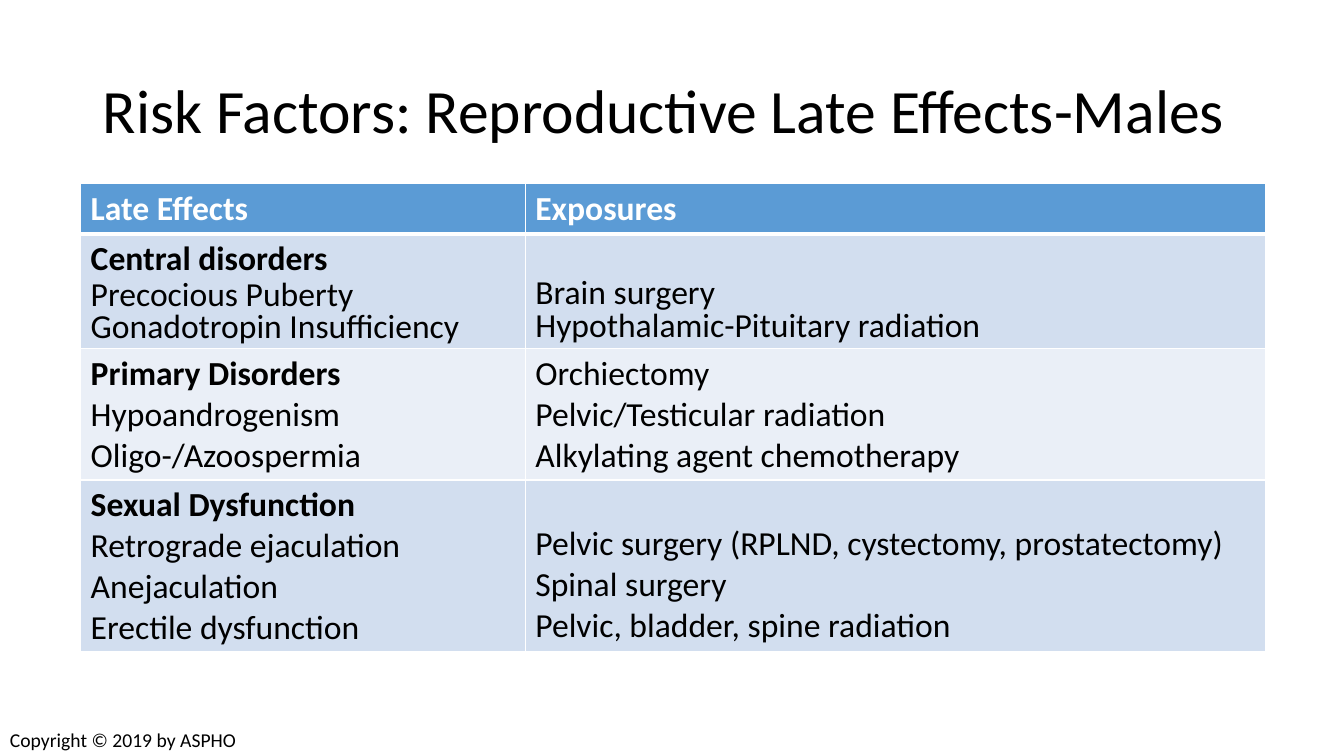
from pptx import Presentation
from pptx.dml.color import RGBColor
from pptx.enum.text import MSO_ANCHOR as Anchor
from pptx.oxml import parse_xml
from pptx.oxml.ns import nsdecls
from pptx.util import Inches, Pt

TITLE = "Risk Factors: Reproductive Late Effects-Males"
NOTICE = "Copyright © 2019 by ASPHO"
HEADS = ["Late Effects", "Exposures"]
# Each group: heading, effects, exposures, line spacing
GROUPS = [
    ("Central disorders",
     ["Precocious Puberty", "Gonadotropin Insufficiency"],
     ["Brain surgery", "Hypothalamic-Pituitary radiation"], 0.8),
    ("Primary Disorders",
     ["Hypoandrogenism", "Oligo-/Azoospermia"],
     ["Orchiectomy", "Pelvic/Testicular radiation",
      "Alkylating agent chemotherapy"], 1.0),
    ("Sexual Dysfunction",
     ["Retrograde ejaculation", "Anejaculation", "Erectile dysfunction"],
     ["Pelvic surgery (RPLND, cystectomy, prostatectomy)",
      "Spinal surgery", "Pelvic, bladder, spine radiation"], 1.0),
]
COLS = [4.41, 7.34]
ROWS = [0.41, 1.14, 1.3, 1.7]
BLACK, WHITE, BLUE = "000000", "FFFFFF", "5B9BD5"
BANDS = ["D2DEEF", "EAEFF7"]


def color(code):
    return RGBColor.from_string(code)


def write(frame, lines, size):
    """Fill a frame with lines of (text, colour, bold, line spacing)."""
    for i, (text, code, bold, gap) in enumerate(lines):
        para = frame.add_paragraph() if i else frame.paragraphs[0]
        para.line_spacing = gap
        run = para.add_run()
        run.text = text
        font = run.font
        font.name, font.size, font.bold = "Calibri", Pt(size), bold
        font.color.rgb = color(code)


def label(slide, place, text, size, anchor, gap):
    frame = slide.shapes.add_textbox(*map(Inches, place)).text_frame
    frame.word_wrap = True
    frame.vertical_anchor = anchor
    write(frame, [(text, BLACK, False, gap)], size)


def border(cell, base):
    """Draw white cell edges; base is the width of the lower one in points."""
    props = cell._tc.get_or_add_tcPr()
    for i, (side, width) in enumerate(zip("LRTB", (1, 1, 1, base))):
        props.insert(i, parse_xml(
            f'<a:ln{side} {nsdecls("a")} w="{Pt(width)}"><a:solidFill>'
            f'<a:srgbClr val="{WHITE}"/></a:solidFill></a:ln{side}>'))


def fill(cell, lines, shade, base=1, anchor=Anchor.TOP):
    cell.fill.solid()
    cell.fill.fore_color.rgb = color(shade)
    cell.vertical_anchor = anchor
    border(cell, base)
    write(cell.text_frame, lines, 24)


def chart_risks(slide):
    size = len(ROWS), len(COLS)
    place = 0.8, 1.82, sum(COLS), sum(ROWS)
    table = slide.shapes.add_table(*size, *map(Inches, place)).table
    for col, width in zip(table.columns, COLS):
        col.width = Inches(width)
    for row, height in zip(table.rows, ROWS):
        row.height = Inches(height)
    for c, head in enumerate(HEADS):
        fill(table.cell(0, c), [(head, WHITE, True, 1.0)], BLUE, base=3)
    for r, (head, effects, causes, gap) in enumerate(GROUPS, 1):
        shade = BANDS[(r - 1) % 2]
        left = [(head, BLACK, True, 1.0)]
        left += [(text, BLACK, False, gap) for text in effects]
        right = [(text, BLACK, False, gap) for text in causes]
        fill(table.cell(r, 0), left, shade)
        fill(table.cell(r, 1), right, shade, anchor=Anchor.BOTTOM)


def main():
    deck = Presentation()
    deck.slide_width, deck.slide_height = Inches(13.33), Inches(7.5)
    slide = deck.slides.add_slide(deck.slide_layouts[6])
    label(slide, (0.92, 0.4, 11.5, 1.45), TITLE, 44, Anchor.MIDDLE, 0.9)
    chart_risks(slide)
    label(slide, (0, 7.17, 2.48, 0.34), NOTICE, 14, Anchor.TOP, 1.0)
    deck.save("out.pptx")


if __name__ == "__main__":
    main()
